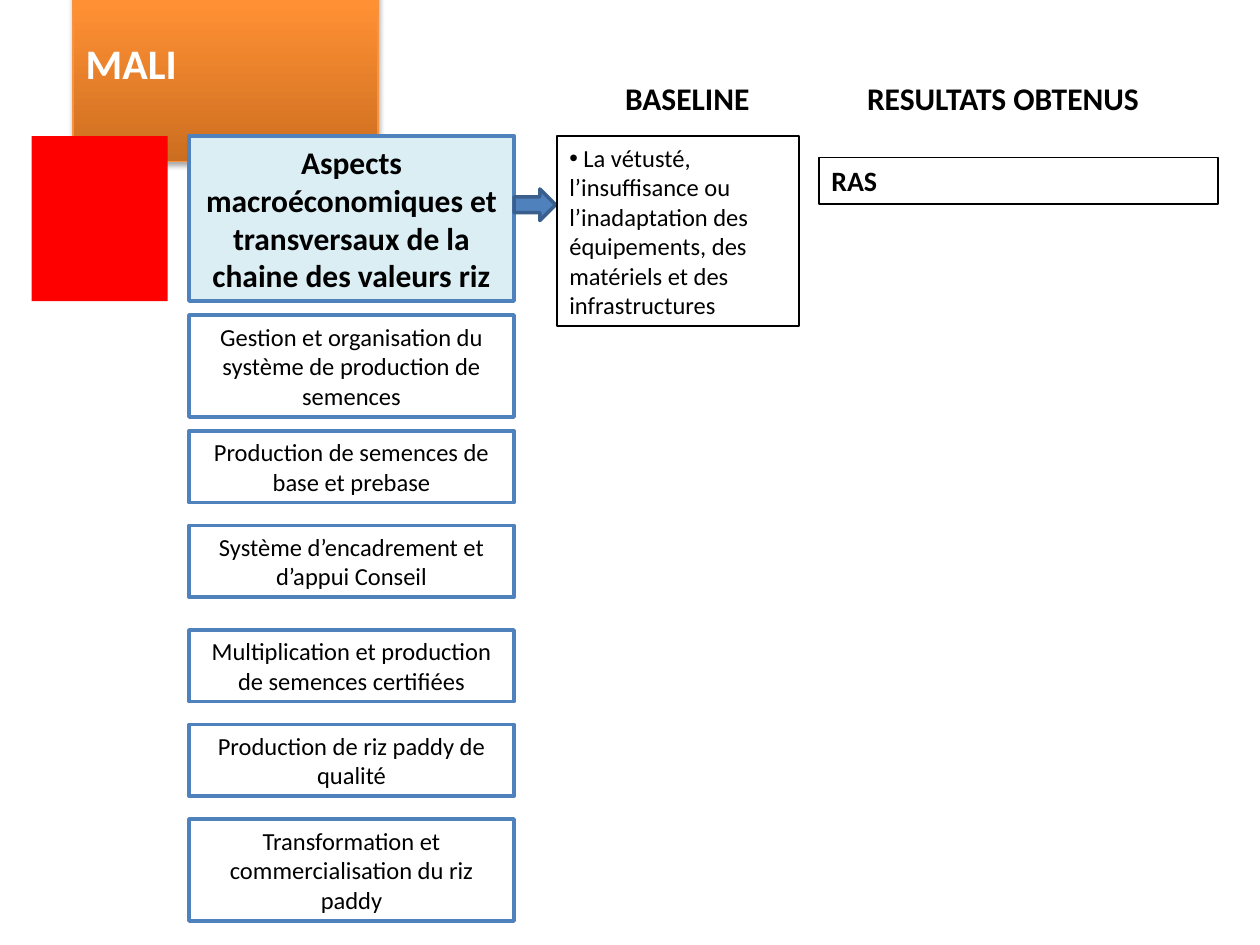
import copy

import pptx
import pptx.dml.color
import pptx.enum.shapes
import pptx.enum.text
import pptx.util
from lxml import etree
from pptx.oxml.ns import qn

COLORS = {
    "black": "000000",
    "white": "FFFFFF",
    "red": "FF0000",
    "blue": "4F81BD",
    "dark_blue": "3A5F8C",
    "pale_blue": "DBEEF4",
    "orange_line": "F69240",
}
TITLE_STOPS = [(0, "CC6E20"), (0.8, "FF9034"), (1, "FF9136")]
Inches = pptx.util.Inches
SHAPES = pptx.enum.shapes.MSO_SHAPE
ALIGN = pptx.enum.text.PP_ALIGN
STEP_LEFT, STEP_WIDTH = 1.5, 2.58
TOP, MAIN_HEIGHT = 1.08, 1.31
STEPS = [
    (2.5, 0.81, "Gestion et organisation du système de production de semences"),
    (3.42, 0.57, "Production de semences de base et prebase"),
    (4.17, 0.57, "Système d’encadrement et d’appui Conseil"),
    (5, 0.57, "Multiplication et production de semences certifiées"),
    (5.75, 0.57, "Production de riz paddy de qualité"),
    (6.5, 0.81, "Transformation et commercialisation du riz paddy"),
]
HEADINGS = [
    ((4.58, 0.58, 1.75, 0.4), "BASELINE"),
    ((6.42, 0.58, 3.08, 0.4), "RESULTATS OBTENUS"),
]


def rgb(name):
    return pptx.dml.color.RGBColor.from_string(COLORS[name])


def write_text(sp, text, size, color="black", bold=False, align=ALIGN.CENTER):
    tf = sp.text_frame
    frame_format = {
        "word_wrap": True,
        "auto_size": pptx.enum.text.MSO_AUTO_SIZE.SHAPE_TO_FIT_TEXT,
        "vertical_anchor": pptx.enum.text.MSO_ANCHOR.MIDDLE,
    }
    for name, value in frame_format.items():
        setattr(tf, name, value)
    p = tf.paragraphs[0]
    p.alignment = align
    r = p.add_run()
    r.text = text
    font_format = {"name": "Calibri", "size": pptx.util.Pt(size), "bold": bold}
    for name, value in font_format.items():
        setattr(r.font, name, value)
    r.font.color.rgb = rgb(color)
    return p


def add_box(s, box, fill=None, line=None, width=2, kind=SHAPES.RECTANGLE):
    sp = s.shapes.add_shape(kind, *map(Inches, box))
    sp.shadow.inherit = False
    if fill:
        sp.fill.solid()
        sp.fill.fore_color.rgb = rgb(fill)
    else:
        sp.fill.background()
    if line:
        sp.line.color.rgb = rgb(line)
        sp.line.width = pptx.util.Pt(width)
    else:
        sp.line.fill.background()
    return sp


def add_heading(s, box, text):
    sp = s.shapes.add_textbox(*map(Inches, box))
    write_text(sp, text, 18, bold=True)


def add_bullet(p):
    pPr = p._p.get_or_add_pPr()
    etree.SubElement(pPr, qn("a:buFont"), typeface="Arial")
    etree.SubElement(pPr, qn("a:buChar"), char="•")


def add_shadow(sp):
    sp.shadow.inherit = False
    effects = sp._element.spPr.find(qn("a:effectLst"))
    shadow = etree.SubElement(
        effects, qn("a:outerShdw"), blurRad=str(pptx.util.Pt(3.1)),
        dist=str(pptx.util.Pt(1.8)), dir="5400000", rotWithShape="0",
    )
    color = etree.SubElement(shadow, qn("a:srgbClr"), val=COLORS["black"])
    etree.SubElement(color, qn("a:alpha"), val="35000")


def fill_gradient(sp, stops):
    sp.fill.gradient()
    sp.fill.gradient_angle = 90
    gs_list = next(sp._element.spPr.iter(qn("a:gsLst")))
    while len(gs_list) < len(stops):
        gs_list.append(copy.deepcopy(gs_list[-1]))
    for stop, (position, color) in zip(sp.fill.gradient_stops, stops):
        stop.position = position
        stop.color.rgb = pptx.dml.color.RGBColor.from_string(color)


def format_title(s, box, text):
    sp = s.shapes.title
    for name, value in zip(("left", "top", "width", "height"), box):
        setattr(sp, name, Inches(value))
    fill_gradient(sp, TITLE_STOPS)
    sp.line.color.rgb = rgb("orange_line")
    sp.line.width = pptx.util.Pt(0.75)
    add_shadow(sp)
    write_text(sp, text, 24, "white", True, ALIGN.LEFT)


def main():
    prs = pptx.Presentation()
    prs.slide_width, prs.slide_height = Inches(10), Inches(7.5)
    s = prs.slides.add_slide(prs.slide_layouts[5])
    format_title(s, (0.58, 0.25, 2.42, 0.5), "MALI")

    for top, height, text in STEPS:
        sp = add_box(s, (STEP_LEFT, top, STEP_WIDTH, height), "white", "blue")
        write_text(sp, text, 14)
    main_step = add_box(s, (STEP_LEFT, TOP, STEP_WIDTH, MAIN_HEIGHT), "pale_blue", "blue")
    write_text(
        main_step,
        "Aspects macroéconomiques et transversaux de la chaine des valeurs riz",
        18, bold=True,
    )
    add_box(s, (4.08, 1.5, 0.33, 0.25), "blue", "dark_blue", kind=SHAPES.RIGHT_ARROW)

    for box, text in HEADINGS:
        add_heading(s, box, text)
    baseline = add_box(s, (4.42, TOP, 1.92, 1.51), line="black", width=1)
    p = write_text(
        baseline,
        " La vétusté, l’insuffisance ou l’inadaptation des équipements, "
        "des matériels et des infrastructures",
        14, align=ALIGN.LEFT,
    )
    add_bullet(p)
    result = add_box(s, (6.5, 1.25, 3.17, 0.37), line="black", width=1)
    write_text(result, "RAS", 16, bold=True, align=ALIGN.LEFT)
    add_box(s, (0.25, TOP, 1.08, MAIN_HEIGHT), "red")

    prs.save("out.pptx")


if __name__ == "__main__":
    main()
